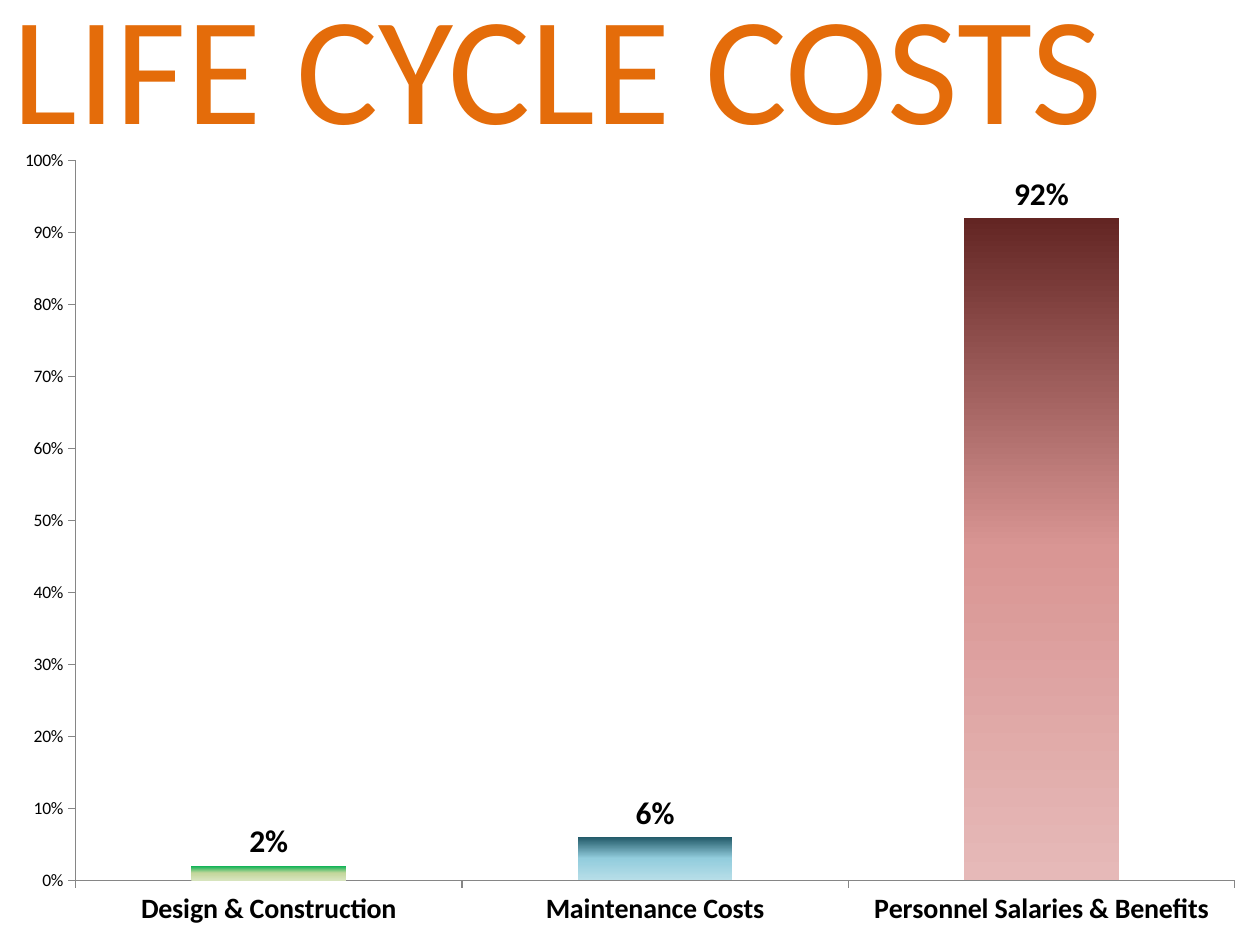
"""Build a slide with a column chart of life cycle costs."""
import copy

import pptx
import pptx.chart.data
import pptx.dml.color
import pptx.enum.chart
import pptx.enum.text
import pptx.oxml
import pptx.oxml.ns
import pptx.util

Pt = pptx.util.Pt
RGBColor = pptx.dml.color.RGBColor
qn = pptx.oxml.ns.qn

ORANGE = RGBColor(0xE4, 0x6C, 0x0A)
BLACK = RGBColor(0, 0, 0)
GREY = RGBColor(0x86, 0x86, 0x86)
BLUE = RGBColor(0x4F, 0x81, 0xBD)
GREENS = [RGBColor(0x00, 0xB0, 0x50), RGBColor(0xC3, 0xD6, 0x9B), RGBColor(0xD7, 0xE4, 0xBD)]
TEALS = [RGBColor(0x21, 0x59, 0x68), RGBColor(0x93, 0xCD, 0xDD), RGBColor(0xB7, 0xDE, 0xE8)]
REDS = [RGBColor(0x63, 0x25, 0x23), RGBColor(0xD9, 0x96, 0x94), RGBColor(0xE6, 0xB9, 0xB8)]
COSTS = [
    ("Design & Construction", 0.02, GREENS),
    ("Maintenance Costs", 0.06, TEALS),
    ("Personnel Salaries & Benefits", 0.92, REDS),
]


def write_text(para, text, size, color, name="Calibri"):
    span = para.add_run()
    span.text = text
    span.font.size = Pt(size)
    span.font.name = name
    span.font.color.rgb = color


deck = pptx.Presentation()
deck.slide_width, deck.slide_height = Pt(720), Pt(540)
page = deck.slides.add_slide(deck.slide_layouts[5])

title = page.shapes.title
title.left, title.top, title.width, title.height = Pt(0), Pt(0), Pt(708), Pt(72)
title.text_frame.vertical_anchor = pptx.enum.text.MSO_ANCHOR.MIDDLE
title.text_frame.auto_size = pptx.enum.text.MSO_AUTO_SIZE.NONE
heading = title.text_frame.paragraphs[0]
heading.alignment = pptx.enum.text.PP_ALIGN.LEFT
write_text(heading, "LIFE CYCLE COSTS", size=88, color=ORANGE)

data = pptx.chart.data.CategoryChartData(number_format="0%")
data.categories = [category for category, share, colors in COSTS]
data.add_series("Series 1", [share for category, share, colors in COSTS])
chart = page.shapes.add_chart(
    pptx.enum.chart.XL_CHART_TYPE.COLUMN_CLUSTERED, Pt(0), Pt(78), Pt(720), Pt(462), data
).chart
chart.has_title = False
chart.has_legend = False
chart.font.name = "Calibri"
chart.font.size = Pt(10)
chart.font.color.rgb = BLACK

for axis in (chart.category_axis, chart.value_axis):
    axis.has_major_gridlines = False
    axis.major_tick_mark = pptx.enum.chart.XL_TICK_MARK.OUTSIDE
    axis.minor_tick_mark = pptx.enum.chart.XL_TICK_MARK.NONE
    axis.format.line.color.rgb = GREY
    axis.format.line.width = Pt(0.75)
chart.category_axis.tick_labels.font.size = Pt(16)
chart.category_axis.tick_labels.font.bold = True
chart.value_axis.minimum_scale = 0
chart.value_axis.maximum_scale = 1
chart.value_axis.major_unit = 0.1
chart.value_axis.tick_labels.number_format = "0%"
chart.value_axis.tick_labels.number_format_is_linked = False

plot = chart.plots[0]
plot.gap_width = 150
plot.vary_by_categories = False
series = plot.series[0]
series.format.fill.solid()
series.format.fill.fore_color.rgb = BLUE
for index, (category, share, colors) in enumerate(COSTS):
    fill = series.points[index].format.fill
    fill.gradient()
    fill.gradient_angle = 270
for gradient_list in list(series._element.iter(qn("a:gsLst"))):
    gradient_list.append(copy.deepcopy(gradient_list[0]))
for index, (category, share, colors) in enumerate(COSTS):
    stops = series.points[index].format.fill.gradient_stops
    for stop, position, color in zip(stops, (0, 0.5, 1), colors):
        stop.position = position
        stop.color.rgb = color

labels = series.data_labels
labels.show_value = True
labels.number_format = "0%"
labels.number_format_is_linked = False
labels.position = pptx.enum.chart.XL_LABEL_POSITION.OUTSIDE_END
labels.font.size = Pt(18)
labels.font.bold = True

plot_area = chart._chartSpace.chart.plotArea
for old_layout in plot_area.findall(qn("c:layout")):
    plot_area.remove(old_layout)
plot_area.insert(0, pptx.oxml.parse_xml(
    '<c:layout xmlns:c="http://schemas.openxmlformats.org/drawingml/2006/chart"><c:manualLayout>'
    '<c:layoutTarget val="inner"/><c:xMode val="edge"/><c:yMode val="edge"/>'
    '<c:x val="0.06"/><c:y val="0.03"/><c:w val="0.92"/><c:h val="0.89"/>'
    '</c:manualLayout></c:layout>'
))

deck.save("out.pptx")
